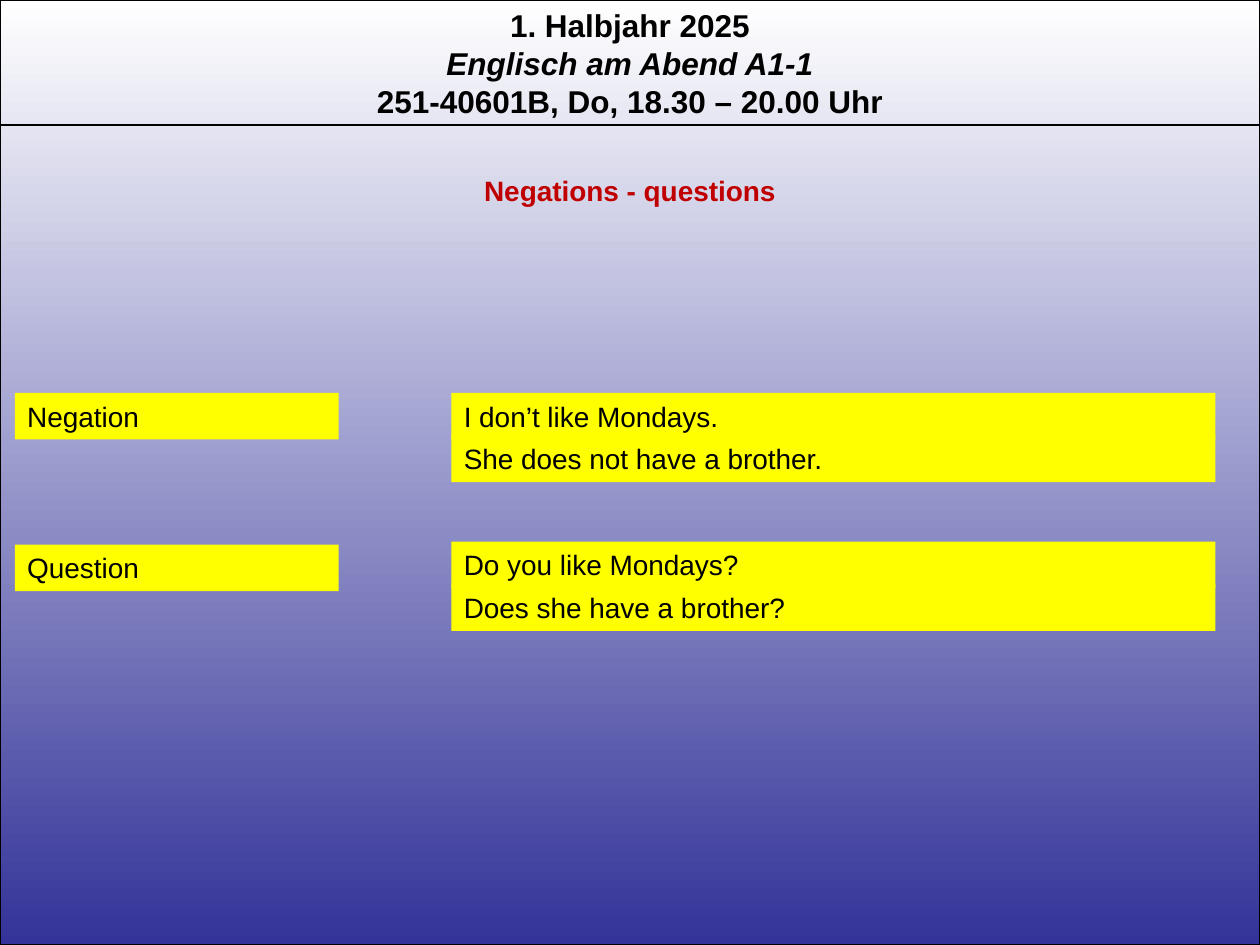
from pptx import Presentation
from pptx.dml.color import RGBColor
from pptx.enum.shapes import MSO_CONNECTOR as Connector, MSO_SHAPE as Shape
from pptx.enum.text import MSO_ANCHOR as Anchor, MSO_AUTO_SIZE as AutoSize, PP_ALIGN as Align
from pptx.oxml.ns import qn
from pptx.util import Cm, Pt

WIDTH, HEIGHT = 25.4, 19.05
HEADER_HEIGHT = 2.52
CARD_HEIGHT = 0.94
SENTENCE_STEP = 0.86
BLACK, WHITE, INDIGO, RED, YELLOW = "000000", "FFFFFF", "333399", "C00000", "FFFF00"


def color(value):
    """Turn a hex string into a colour."""
    return RGBColor.from_string(value)


def add_line(frame, text, size, ink=BLACK, bold=False, italic=False, align=Align.LEFT, first=True):
    """Write one paragraph with a single run into a text frame."""
    paragraph = frame.paragraphs[0] if first else frame.add_paragraph()
    paragraph.alignment = align
    run = paragraph.add_run()
    run.text = text
    font = run.font
    font.name, font.size, font.bold, font.italic = "Arial", Pt(size), bold, italic
    font.color.rgb = color(ink)


def add_background(slide, left, top, width, height):
    """Fill the box with a framed gradient from white down to indigo."""
    backdrop = slide.shapes.add_shape(Shape.RECTANGLE, Cm(left), Cm(top), Cm(width), Cm(height))
    backdrop.shadow.inherit = False
    backdrop.fill.gradient()
    backdrop.fill.gradient_angle = 270
    for stop, position, shade in zip(backdrop.fill.gradient_stops, (0, 1), (WHITE, INDIGO)):
        stop.position = position
        stop.color.rgb = color(shade)
    backdrop.line.color.rgb = color(BLACK)
    backdrop.line.width = Pt(0.75)


def add_centered_text(slide, left, top, width, height, lines, size, ink):
    """Place bold centred lines, given as pairs of text and italic flag."""
    heading = slide.shapes.add_textbox(Cm(left), Cm(top), Cm(width), Cm(height))
    frame = heading.text_frame
    frame.word_wrap = True
    frame.auto_size = AutoSize.SHAPE_TO_FIT_TEXT
    for index, (text, italic) in enumerate(lines):
        add_line(frame, text, size, ink, True, italic, Align.CENTER, first=index == 0)


def add_header(slide, left, top, width, height):
    """Place the course details with a rule below them."""
    course = [
        ("1. Halbjahr 2025", False),
        ("Englisch am Abend A1-1", True),
        ("251-40601B, Do, 18.30 – 20.00 Uhr", False),
    ]
    add_centered_text(slide, left, top, width, height, course, 18, BLACK)
    rule_top = Cm(top + height)
    rule = slide.shapes.add_connector(Connector.STRAIGHT, Cm(left), rule_top, Cm(left + width), rule_top)
    rule.line.color.rgb = color(BLACK)
    rule.line.width = Pt(0.75)
    properties = rule._element.spPr
    properties.append(properties.makeelement(qn("a:effectLst"), {}))


def add_card(slide, left, top, width, text):
    """Place one yellow card with a line of text."""
    card = slide.shapes.add_shape(Shape.RECTANGLE, Cm(left), Cm(top), Cm(width), Cm(CARD_HEIGHT))
    card.shadow.inherit = False
    card.fill.solid()
    card.fill.fore_color.rgb = color(YELLOW)
    card.line.fill.background()
    frame = card.text_frame
    frame.word_wrap = True
    frame.auto_size = AutoSize.SHAPE_TO_FIT_TEXT
    frame.vertical_anchor = Anchor.TOP
    add_line(frame, text, 16)


def add_examples(slide, left, label_top, sentence_top, label, sentences):
    """Place a label card and its example sentences to the right."""
    add_card(slide, left, label_top, 6.53, label)
    for index, sentence in enumerate(sentences):
        add_card(slide, left + 8.8, sentence_top + index * SENTENCE_STEP, 15.4, sentence)


def main():
    """Build the slide and save it."""
    deck = Presentation()
    deck.slide_width, deck.slide_height = Cm(WIDTH), Cm(HEIGHT)
    slide = deck.slides.add_slide(deck.slide_layouts[6])
    add_background(slide, 0, 0, WIDTH, HEIGHT)
    add_header(slide, 0, 0, WIDTH, HEADER_HEIGHT)
    add_centered_text(slide, 0, 3.38, WIDTH, CARD_HEIGHT, [("Negations - questions", False)], 16, RED)
    add_examples(slide, 0.3, 7.92, 7.92, "Negation",
                 ["I don’t like Mondays.", "She does not have a brother."])
    add_examples(slide, 0.3, 10.98, 10.92, "Question",
                 ["Do you like Mondays?", "Does she have a brother?"])
    deck.save("out.pptx")


if __name__ == "__main__":
    main()
